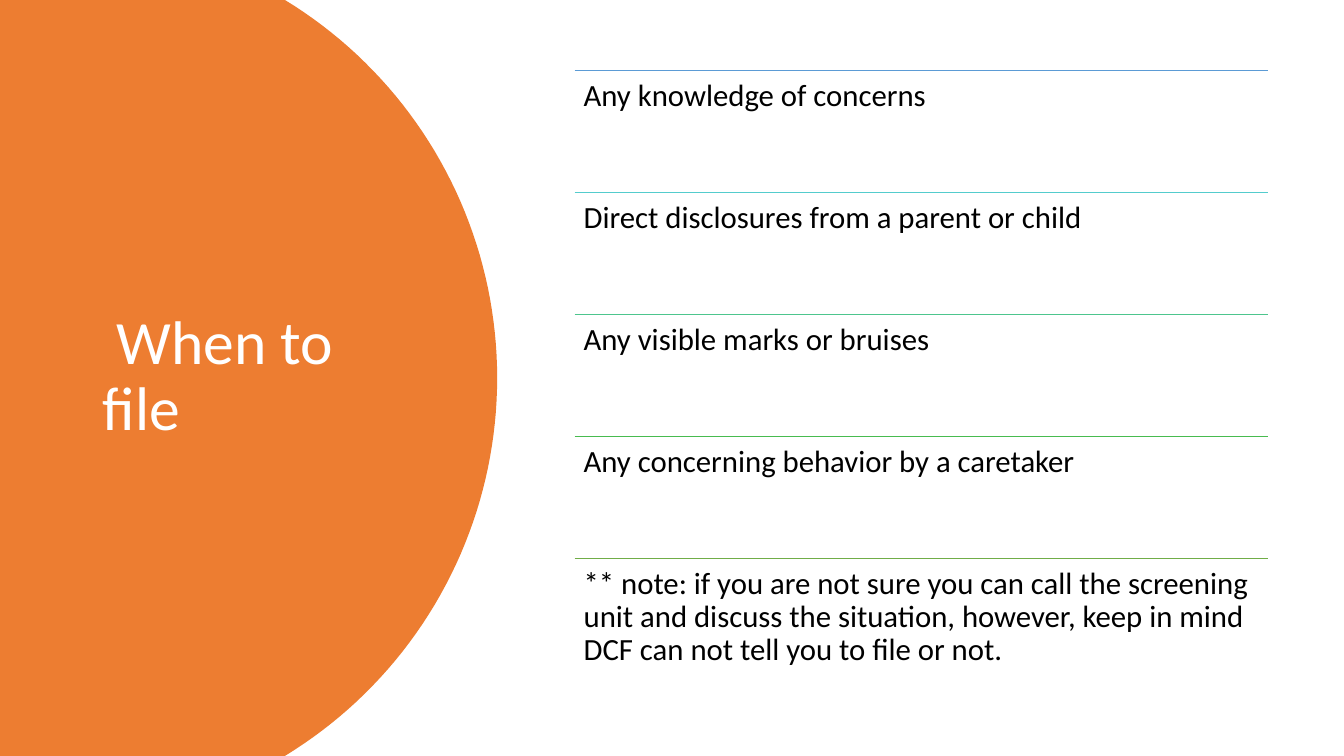
from dataclasses import dataclass
from math import asin, cos, sin

from lxml.etree import SubElement
from pptx import Presentation
from pptx.dml.color import RGBColor as Rgb
from pptx.enum.shapes import MSO_CONNECTOR as Link
from pptx.enum.text import MSO_ANCHOR as Anchor
from pptx.oxml.ns import qn
from pptx.util import Cm, Pt


@dataclass(frozen=True)
class Theme:
    font: str = "Calibri"
    panel: str = "ED7D31"
    light: str = "FFFFFF"
    dark: str = "000000"
    rules: tuple = ("5B9BD5", "54CCCD", "4DC58D", "48BB4F", "70AD47")
    title: int = 44
    body: int = 22
    rule: int = 1


THEME = Theme()
WIDE, HIGH = 33.87, 19.05
ITEMS = (
    "Any knowledge of concerns",
    "Direct disclosures from a parent or child",
    "Any visible marks or bruises",
    "Any concerning behavior by a caretaker",
    "** note: if you are not sure you can call the screening unit and discuss "
    "the situation, however, keep in mind DCF can not tell you to file or not.",
)


def add_text(slide, box, text, size, color, inset, anchor):
    frame = slide.shapes.add_textbox(*map(Cm, box)).text_frame
    frame.word_wrap = True
    frame.vertical_anchor = anchor
    frame.margin_left = frame.margin_right = Cm(inset[0])
    frame.margin_top = frame.margin_bottom = Cm(inset[1])
    para = frame.paragraphs[0]
    para.text = text
    para.line_spacing = 0.9
    para.font.name = THEME.font
    para.font.size = Pt(size)
    para.font.color.rgb = Rgb.from_string(color)


def add_rule(slide, left, top, width, color):
    ends = map(Cm, (left, top, left + width, top))
    line = slide.shapes.add_connector(Link.STRAIGHT, *ends)
    line.line.color.rgb = Rgb.from_string(color)
    line.line.width = Pt(THEME.rule)
    SubElement(line._element.spPr, qn("a:effectLst"))


def add_panel(slide, box, edge, steps=80):
    left, top, width, height = box
    bulge, half = width - edge, height / 2
    radius = (bulge ** 2 + half ** 2) / (2 * bulge)
    sweep = asin(half / radius)
    mid = left + width - radius
    angles = [sweep * (2 * step / steps - 1) for step in range(steps + 1)]
    arc = [(Cm(mid + radius * cos(a)), Cm(top + half + radius * sin(a)))
           for a in angles]
    form = slide.shapes.build_freeform(Cm(left), Cm(top))
    form.add_line_segments(arc + [(Cm(left), Cm(top + height))], close=True)
    panel = form.convert_to_shape()
    panel.shadow.inherit = False
    panel.fill.solid()
    panel.fill.fore_color.rgb = Rgb.from_string(THEME.panel)
    panel.line.fill.background()
    area = (left + 2.34, top + 1.78, 8.2, height - 3.58)
    add_text(slide, area, " When to file", THEME.title, THEME.light,
             (0.25, 0.13), Anchor.MIDDLE)


def add_list(slide, box):
    left, top, width, height = box
    row = height / len(ITEMS)
    for index, (text, color) in enumerate(zip(ITEMS, THEME.rules)):
        y = top + index * row
        add_rule(slide, left, y, width, color)
        add_text(slide, (left, y, width, row), text, THEME.body, THEME.dark,
                 (0.23, 0.23), Anchor.TOP)


def main():
    deck = Presentation()
    deck.slide_width, deck.slide_height = Cm(WIDE), Cm(HIGH)
    slide = deck.slides.add_slide(deck.slide_layouts[6])
    add_panel(slide, (0, 0, 12.53, HIGH), 7.18)
    add_list(slide, (14.48, 1.78, 17.48, 15.37))
    deck.save("out.pptx")


if __name__ == "__main__":
    main()
